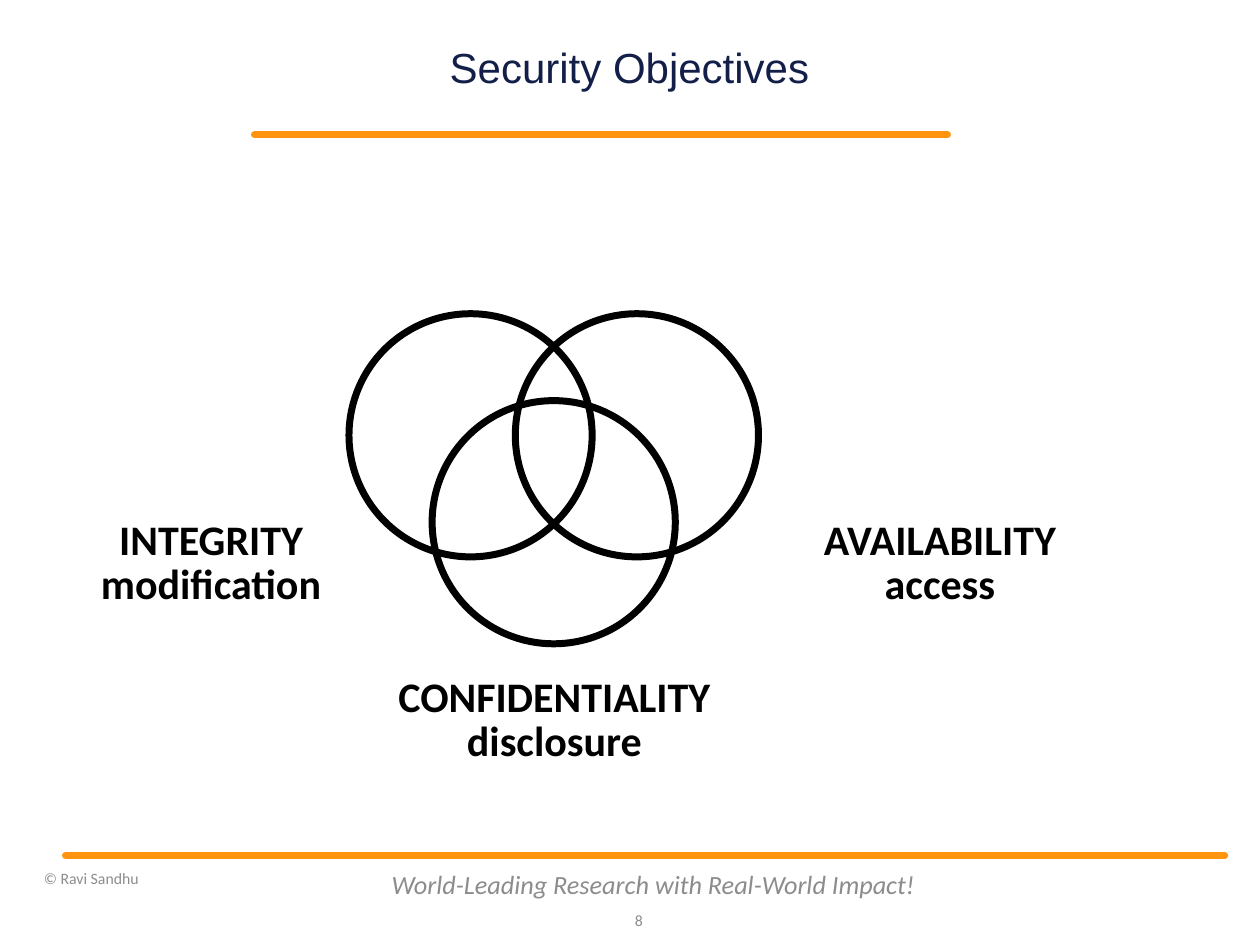
"""Build the Security Objectives slide with its three-circle diagram."""
import dataclasses
import typing

import lxml.etree
import pptx
import pptx.dml.color
import pptx.enum.shapes
import pptx.enum.text
import pptx.oxml.ns
import pptx.util

Inches = pptx.util.Inches
Pt = pptx.util.Pt
ALIGN = pptx.enum.text.PP_ALIGN
ANCHOR = pptx.enum.text.MSO_ANCHOR
SHAPE = pptx.enum.shapes.MSO_SHAPE
LINK = pptx.enum.shapes.MSO_CONNECTOR
HUES = {"rule": "FF950E", "ring": "000000", "label": "000000",
        "title": "131F49", "foot": "8C8C8C"}
SIDES = ("left", "top", "right", "bottom")
RING = 1.93


@dataclasses.dataclass
class Style:
    """Text format shared by boxes."""
    hue: str
    font: dict
    align: ALIGN = ALIGN.CENTER
    anchor: ANCHOR = ANCHOR.MIDDLE
    pads: tuple = (0.1, 0.05, 0.1, 0.05)
    space: float = 1.0
    wrap: bool = True


@dataclasses.dataclass
class Label:
    """Lines of text in a box."""
    lines: tuple
    box: tuple
    style: Style


@dataclasses.dataclass
class Rule:
    """Horizontal line."""
    left: float
    right: float
    top: float


def foot(size: float, align: ALIGN, italic: bool = False) -> Style:
    """Return a footer style."""
    font = {"name": "Calibri", "size": Pt(size), "italic": italic}
    return Style("foot", font, align)


TITLE = Style("title", {"name": "Arial", "size": Pt(24)},
              pads=(0, 0, 0, 0), space=0.9)
GOAL = Style("label", {"name": "Calibri", "size": Pt(24), "bold": True},
             anchor=ANCHOR.TOP, pads=(0.07, 0.03, 0.07, 0.03),
             space=0.87, wrap=False)

RULES = (Rule(2.02, 7.52, 1.07), Rule(0.52, 9.72, 6.79))
RINGS = ((4.09, 2.49), (2.77, 2.49), (3.43, 3.18))
LABELS = (
    Label(("World-Leading Research with Real-World Impact!",),
          (3, 6.82, 4.37, 0.4), foot(15, ALIGN.CENTER, True)),
    Label(("8",), (4.8, 7.1, 0.4, 0.4), foot(9, ALIGN.RIGHT)),
    Label(("© Ravi Sandhu",), (0.25, 6.79, 2.75, 0.36), foot(9, ALIGN.LEFT)),
    Label(("Security Objectives",), (2.37, 0.3, 5.25, 0.51), TITLE),
    Label(("INTEGRITY", "modification"), (0.65, 4.1, 2.05, 0.75), GOAL),
    Label(("AVAILABILITY", "access"), (6.15, 4.1, 2.62, 0.75), GOAL),
    Label(("CONFIDENTIALITY", "disclosure"), (2.74, 5.35, 3.32, 0.75), GOAL),
)


def tint(key: str) -> pptx.dml.color.RGBColor:
    """Return a named colour."""
    return pptx.dml.color.RGBColor.from_string(HUES[key])


def apply(item: typing.Any, values: dict) -> None:
    """Set attributes from a dict."""
    for name, value in values.items():
        setattr(item, name, value)


def stroke(shape: typing.Any, key: str) -> None:
    """Give a shape its thick line."""
    shape.line.color.rgb = tint(key)
    shape.line.width = Pt(4)


def draw_rule(slide: typing.Any, rule: Rule) -> None:
    """Draw a line with round ends."""
    line = slide.shapes.add_connector(
        LINK.STRAIGHT, Inches(rule.left), Inches(rule.top),
        Inches(rule.right), Inches(rule.top))
    stroke(line, "rule")
    line.line._get_or_add_ln().set("cap", "rnd")
    lxml.etree.SubElement(line._element.spPr, pptx.oxml.ns.qn("a:effectLst"))


def draw_ring(slide: typing.Any, left: float, top: float) -> None:
    """Draw an open circle."""
    ring = slide.shapes.add_shape(
        SHAPE.OVAL, Inches(left), Inches(top), Inches(RING), Inches(RING))
    ring.shadow.inherit = False
    ring.fill.background()
    stroke(ring, "ring")


def draw_label(slide: typing.Any, label: Label) -> None:
    """Draw a text box."""
    style = label.style
    frame = slide.shapes.add_textbox(*map(Inches, label.box)).text_frame
    apply(frame, {"word_wrap": style.wrap, "vertical_anchor": style.anchor})
    apply(frame, {f"margin_{side}": Inches(pad)
                  for side, pad in zip(SIDES, style.pads)})
    frame.text = "\n".join(label.lines)
    for para in frame.paragraphs:
        apply(para, {"alignment": style.align, "line_spacing": style.space})
        for run in para.runs:
            apply(run.font, style.font)
            run.font.color.rgb = tint(style.hue)


def main() -> None:
    """Build and save the slide."""
    deck = pptx.Presentation()
    apply(deck, {"slide_width": Inches(10), "slide_height": Inches(7.5)})
    slide = deck.slides.add_slide(deck.slide_layouts[6])
    for rule in RULES:
        draw_rule(slide, rule)
    for label in LABELS:
        draw_label(slide, label)
    for spot in RINGS:
        draw_ring(slide, *spot)
    deck.save("out.pptx")


if __name__ == "__main__":
    main()
